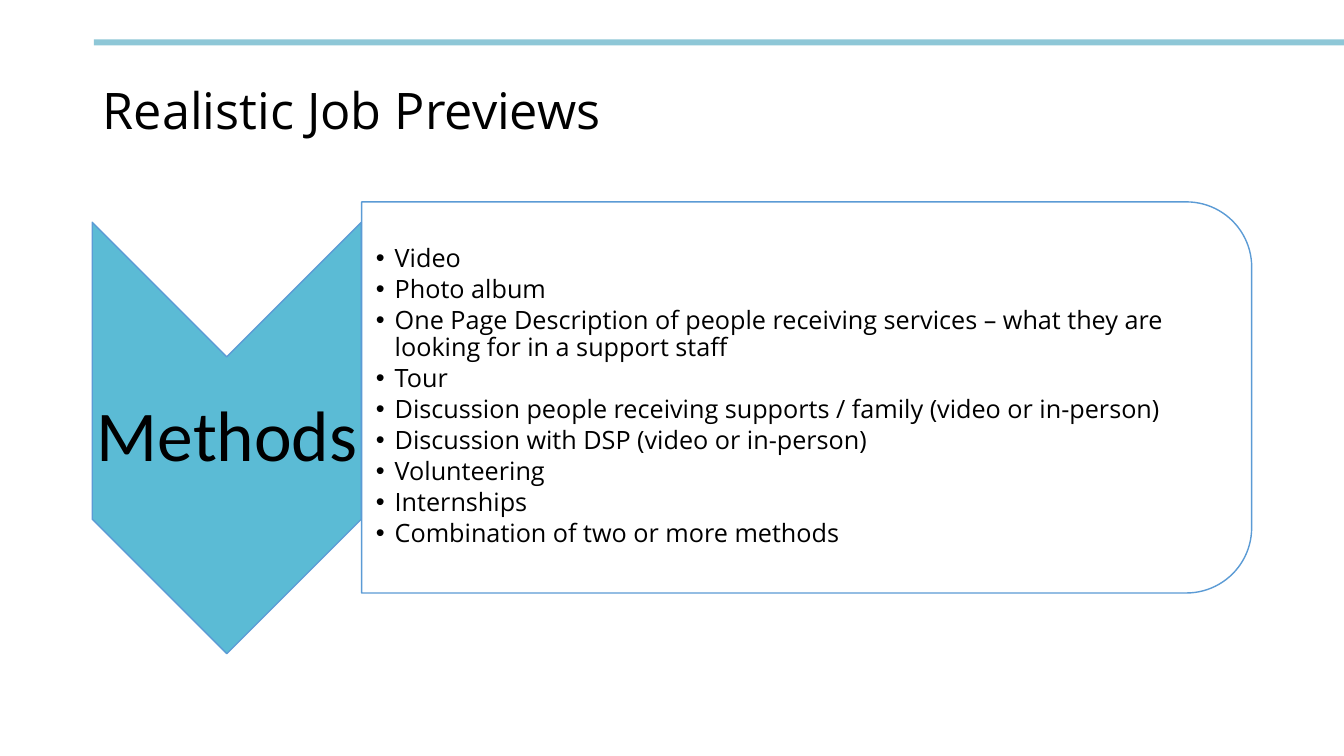
"""Build the Realistic Job Previews slide."""
from dataclasses import dataclass
from typing import Any, Optional

import pptx
import pptx.dml.color
import pptx.enum.shapes
import pptx.enum.text
import pptx.oxml
import pptx.oxml.ns
import pptx.util

Pt = pptx.util.Pt
Preset = pptx.enum.shapes.MSO_SHAPE
Align = pptx.enum.text.PP_ALIGN


@dataclass(frozen=True)
class Theme:
    bar: str = "8EC7D7"
    chevron: str = "5BBBD5"
    outline: str = "5B9BD5"
    panel: str = "FFFFFF"
    text: str = "000000"
    body_font: str = "Open Sans"
    label_font: str = "Calibri"
    title_size: float = 36
    label_size: float = 51
    body_size: float = 18


@dataclass(frozen=True)
class Box:
    left: float
    top: float
    width: float
    height: float

    def lengths(self) -> list[int]:
        return [Pt(v) for v in (self.left, self.top, self.width, self.height)]


@dataclass(frozen=True)
class Figure:
    preset: Any
    box: Box
    fill: str
    outline: Optional[str] = None
    rotation: float = 0
    opacity: int = 100


@dataclass(frozen=True)
class Passage:
    box: Box
    lines: tuple[str, ...]
    font: str
    size: float
    insets: tuple[float, float, float, float]
    align: Any = Align.LEFT
    space_after: float = 0
    hanging: float = 0


THEME = Theme()
METHODS = (
    "Video",
    "Photo album",
    "One Page Description of people receiving services – what they are looking for in a support staff",
    "Tour",
    "Discussion people receiving supports / family (video or in-person)",
    "Discussion with DSP (video or in-person)",
    "Volunteering",
    "Internships",
    "Combination of two or more methods",
)
FIGURES = (
    Figure(Preset.RECTANGLE, Box(67, 28.1, 893, 4.3), THEME.bar),
    Figure(Preset.CHEVRON, Box(7.92, 216.72, 308.16, 192.24), THEME.chevron, THEME.outline, 90),
    Figure(Preset.ROUND_2_SAME_RECTANGLE, Box(436.5, -34, 279.36, 635.76),
           THEME.panel, THEME.outline, 90, 90),
)
PASSAGES = (
    Passage(Box(66.24, 28.8, 828, 104.4), ("Realistic Job Previews",),
            THEME.body_font, THEME.title_size, (7.2, 3.6, 7.2, 3.6)),
    Passage(Box(66.24, 254.88, 192.24, 115.92), ("Methods",),
            THEME.label_font, THEME.label_size, (2.5, 2.5, 2.5, 2.5), Align.CENTER),
    Passage(Box(258.48, 157.68, 622.08, 252), METHODS, THEME.body_font,
            THEME.body_size, (10, 0.9, 0.9, 0.9), space_after=2.7, hanging=13.5),
)


def apply(target: Any, values: dict[str, Any]) -> None:
    for name, value in values.items():
        setattr(target, name, value)


def color(value: str) -> Any:
    return pptx.dml.color.RGBColor.from_string(value)


def add_element(parent: Any, tag: str, **attributes: Any) -> None:
    element = pptx.oxml.parse_xml(f"<{tag} {pptx.oxml.ns.nsdecls('a')}/>")
    for name, value in attributes.items():
        element.set(name, str(value))
    parent.append(element)


def draw_figure(slide: Any, figure: Figure) -> None:
    shape = slide.shapes.add_shape(figure.preset, *figure.box.lengths())
    shape.rotation = figure.rotation
    shape.shadow.inherit = False
    shape.fill.solid()
    shape.fill.fore_color.rgb = color(figure.fill)
    if figure.opacity < 100:
        tint = shape.fill._xPr.find(".//" + pptx.oxml.ns.qn("a:srgbClr"))
        add_element(tint, "a:alpha", val=figure.opacity * 1000)
    if figure.outline:
        shape.line.color.rgb = color(figure.outline)
        shape.line.width = Pt(1)
    else:
        shape.line.fill.background()


def write_passage(slide: Any, passage: Passage) -> None:
    frame = slide.shapes.add_textbox(*passage.box.lengths()).text_frame
    sides = ("margin_left", "margin_top", "margin_right", "margin_bottom")
    apply(frame, {
        "word_wrap": True,
        "vertical_anchor": pptx.enum.text.MSO_ANCHOR.MIDDLE,
        **{side: Pt(inset) for side, inset in zip(sides, passage.insets)},
    })
    for index, line in enumerate(passage.lines):
        paragraph = frame.add_paragraph() if index else frame.paragraphs[0]
        paragraph.text = line
        apply(paragraph, {
            "alignment": passage.align,
            "line_spacing": 0.9,
            "space_after": Pt(passage.space_after),
        })
        if passage.hanging:
            paragraph.level = 1
            properties = paragraph._p.get_or_add_pPr()
            indent = Pt(passage.hanging)
            properties.set("marL", str(indent))
            properties.set("indent", str(-indent))
            add_element(properties, "a:buFont", typeface="Arial")
            add_element(properties, "a:buChar", char="•")
        apply(paragraph.font, {"name": passage.font, "size": Pt(passage.size)})
        paragraph.font.color.rgb = color(THEME.text)


def main() -> None:
    deck = pptx.Presentation()
    apply(deck, {"slide_width": Pt(960), "slide_height": Pt(540)})
    slide = deck.slides.add_slide(deck.slide_layouts[6])
    for figure in FIGURES:
        draw_figure(slide, figure)
    for passage in PASSAGES:
        write_passage(slide, passage)
    deck.save("out.pptx")


if __name__ == "__main__":
    main()
